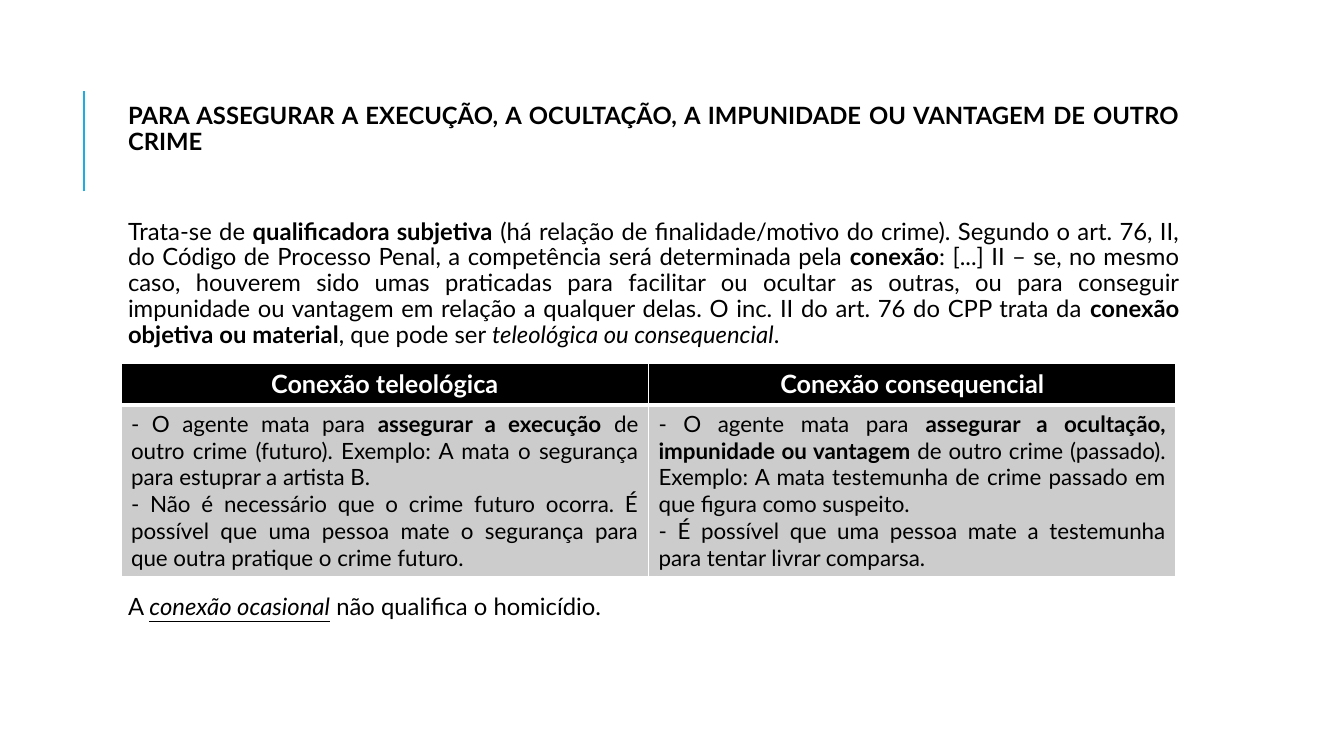
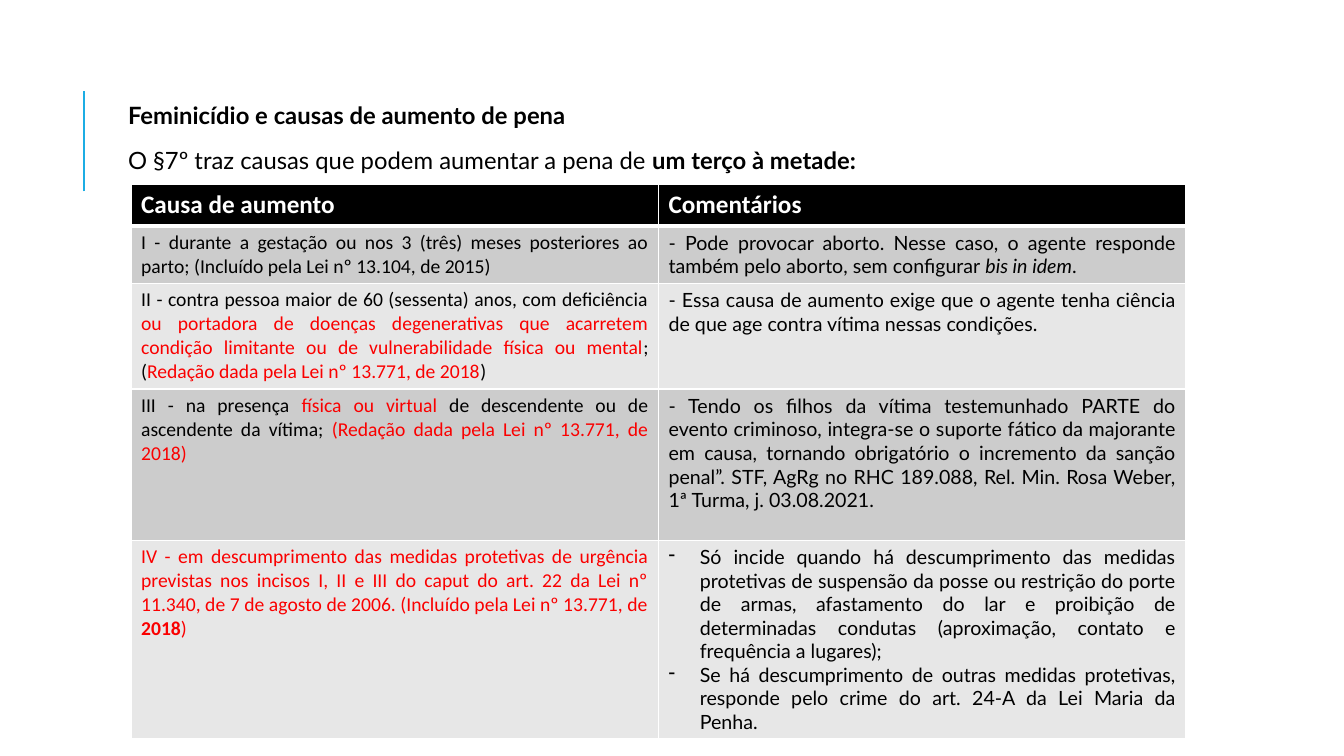
from lxml import etree
from pptx import Presentation
from pptx.dml.color import RGBColor
from pptx.enum.shapes import MSO_CONNECTOR
from pptx.enum.text import PP_ALIGN as AL
from pptx.oxml.ns import qn
from pptx.util import Inches, Pt

# Shared look
rgb = RGBColor.from_string
BLACK, WHITE, RED, ACCENT = "000000", "FFFFFF", "FA0000", "1CADE4"
BANDS = ["CCCCCC", "E7E7E7"]
HEAD_FONT, BODY_FONT = "Calibri", "Lato"
BODY_SIZE, HEAD_SIZE = 17, 18

prs = Presentation()
prs.slide_width, prs.slide_height = Inches(13.33), Inches(7.5)
col, row = prs.slide_width / 100, prs.slide_height / 100  # 100 x 100 grid
TEXT_LEFT, TEXT_WIDTH, TABLE_WIDTH = 8.4, 79.73, 78.5


def write(tf, paras, size, font, c=BLACK, align=AL.JUSTIFY):
    """Each paragraph is a list of (text, style); style letters: b, i, u, r (red)."""
    tf.word_wrap = True
    for n, runs in enumerate(paras):
        p = tf.paragraphs[0] if n == 0 else tf.add_paragraph()
        p.alignment = align
        for text, style in runs:
            r = p.add_run()
            r.text = text
            f = r.font
            f.size, f.name = Pt(size), font
            f.bold, f.italic, f.underline = (k in style for k in "biu")
            f.color.rgb = rgb(RED if "r" in style else c)


def add_body(s, top, height, paras):
    """Justified text block aligned with the slide's text column."""
    sp = s.shapes.add_textbox(int(TEXT_LEFT * col), int(top * row),
                              int(TEXT_WIDTH * col), int(height * row))
    tf = sp.text_frame
    tf.margin_left = Inches(0.15)
    tf.margin_right = tf.margin_top = tf.margin_bottom = Inches(0.05)
    write(tf, paras, BODY_SIZE, BODY_FONT)
    for p in tf.paragraphs:
        p.line_spacing, p.space_before, p.space_after = 0.9, Pt(12), Pt(2)
    return tf


# Content: body text, table place, row heights, header and rows
connection = dict(
    body=[
        [("PARA ASSEGURAR A EXECUÇÃO, A OCULTAÇÃO, A IMPUNIDADE OU VANTAGEM DE OUTRO CRIME", "b")],
        [("Trata-se de ", ""), ("qualificadora subjetiva", "b"),
         (" (há relação de finalidade/motivo do crime). Segundo o art. 76, II, do Código de "
          "Processo Penal, a competência será determinada pela ", ""), ("conexão", "b"),
         (": [...] II – se, no mesmo caso, houverem sido umas praticadas para facilitar ou "
          "ocultar as outras, ou para conseguir impunidade ou vantagem em relação a qualquer "
          "delas. O inc. II do art. 76 do CPP trata da ", ""),
         ("conexão objetiva ou material", "b"), (", que pode ser ", ""),
         ("teleológica ou consequencial", "i"), (".", "")],
    ],
    body_height=34, left=9, top=48.13, heights=[5.47, 22.67],
    header=["Conexão teleológica", "Conexão consequencial"],
    header_font=BODY_FONT, header_align=AL.CENTER, size=16, fonts=[BODY_FONT, BODY_FONT],
    rows=[[
        [[("- O agente mata para ", ""), ("assegurar a execução", "b"),
          (" de outro crime (futuro). Exemplo: A mata o segurança para estuprar a artista B.", "")],
         [("- Não é necessário que o crime futuro ocorra. É possível que uma pessoa mate o "
           "segurança para que outra pratique o crime futuro.", "")]],
        [[("- O agente mata para ", ""), ("assegurar a ocultação, impunidade ou vantagem", "b"),
          (" de outro crime (passado). Exemplo: A mata testemunha de crime passado em que "
           "figura como suspeito.", "")],
         [("- É possível que uma pessoa mate a testemunha para tentar livrar comparsa.", "")]],
    ]],
)
increase = dict(
    body=[
        [("Feminicídio e causas de aumento de pena", "b")],
        [("O §7º traz causas que podem aumentar a pena de ", ""), ("um terço à metade:", "b")],
    ],
    body_height=11, left=9.75, top=24.4, heights=[5.47, 7.6, 14, 20, 26.13],
    header=["Causa de aumento", "Comentários"],
    header_font=HEAD_FONT, header_align=AL.LEFT, size=14, fonts=[HEAD_FONT, BODY_FONT],
    rows=[
        [[[("I - durante a gestação ou nos 3 (três) meses posteriores ao parto; "
            "(Incluído pela Lei nº 13.104, de 2015)", "")]],
         [[("- Pode provocar aborto. Nesse caso, o agente responde também pelo aborto, "
            "sem configurar ", ""), ("bis in idem", "i"), (".", "")]]],
        [[[("II - contra pessoa maior de 60 (sessenta) anos, com deficiência ", ""),
           ("ou portadora de doenças degenerativas que acarretem condição limitante ou de "
            "vulnerabilidade física ou mental", "r"), ("; (", ""),
           ("Redação dada pela Lei nº 13.771, de 2018", "r"), (")", "")]],
         [[("- Essa causa de aumento exige que o agente tenha ciência de que age contra "
            "vítima nessas condições.", "")]]],
        [[[("III - na presença ", ""), ("física ou virtual", "r"),
           (" de descendente ou de ascendente da vítima; ", ""),
           ("(Redação dada pela Lei nº 13.771, de 2018)", "r")]],
         [[("- Tendo os filhos da vítima testemunhado PARTE do evento criminoso, integra-se o "
            "suporte fático da majorante em causa, tornando obrigatório o incremento da sanção "
            "penal”. STF, AgRg no RHC 189.088, Rel. Min. Rosa Weber, 1ª Turma, "
            "j. 03.08.2021.", "")]]],
        [[[("IV - em descumprimento das medidas protetivas de urgência previstas nos incisos I, "
            "II e III do caput do art. 22 da Lei nº 11.340, de 7 de agosto de 2006. "
            "(Incluído pela Lei nº 13.771, de ", "r"), ("2018", "br"), (")", "r")]],
         [[("Só incide quando há descumprimento das medidas protetivas de suspensão da posse ou "
            "restrição do porte de armas, afastamento do lar e proibição de determinadas "
            "condutas (aproximação, contato e frequência a lugares);", "")],
          [("Se há descumprimento de outras medidas protetivas, responde pelo crime do art. "
            "24-A da Lei Maria da Penha.", "")]]],
    ],
)

for d in (connection, increase):
    s = prs.slides.add_slide(prs.slide_layouts[6])

    # Accent rule beside the title
    x = int(6.25 * col)
    rule = s.shapes.add_connector(MSO_CONNECTOR.STRAIGHT, x, int(25.33 * row), x, int(12 * row))
    rule.line.color.rgb, rule.line.width = rgb(ACCENT), Pt(1.5)
    etree.SubElement(rule.element.spPr, qn("a:effectLst"))

    # Body text
    d["tf"] = add_body(s, 13.07, d["body_height"], d["body"])

    # Table
    t = s.shapes.add_table(len(d["heights"]), 2, int(d["left"] * col), int(d["top"] * row),
                           int(TABLE_WIDTH * col), int(sum(d["heights"]) * row)).table
    t.horz_banding = False
    for r, h in zip(t.rows, d["heights"]):
        r.height = int(h * row)
    for i in range(len(d["heights"])):
        for j in range(2):
            cell = t.cell(i, j)
            # White borders, thicker under the header
            tc_pr = cell._tc.get_or_add_tcPr()
            for side in "LRTB":
                thick = (i, side) in ((0, "B"), (1, "T"))
                ln = etree.SubElement(tc_pr, qn(f"a:ln{side}"), w=str(Pt(3 if thick else 1)))
                fill = etree.SubElement(ln, qn("a:solidFill"))
                etree.SubElement(fill, qn("a:srgbClr"), val=WHITE)
            cell.fill.solid()
            cell.fill.fore_color.rgb = rgb(BANDS[(i - 1) % 2] if i else BLACK)
            if i == 0:
                write(cell.text_frame, [[(d["header"][j], "b")]], HEAD_SIZE,
                      d["header_font"], WHITE, d["header_align"])
            else:
                write(cell.text_frame, d["rows"][i - 1][j], d["size"], d["fonts"][j])

# Gap under the first title, and the closing remark below its table
connection["tf"].paragraphs[1].space_before = Pt(44)
add_body(prs.slides[0], 78, 5, [[("A ", ""), ("conexão ocasional", "iu"),
                                 (" não qualifica o homicídio.", "")]])

# Hanging dashes in the last comment
for p in t.cell(4, 1).text_frame.paragraphs:
    p_pr = p._p.get_or_add_pPr()
    p_pr.set("marL", str(Inches(0.31)))
    p_pr.set("indent", str(-Inches(0.31)))
    etree.SubElement(p_pr, qn("a:buChar"), char="-")

prs.save("out.pptx")
